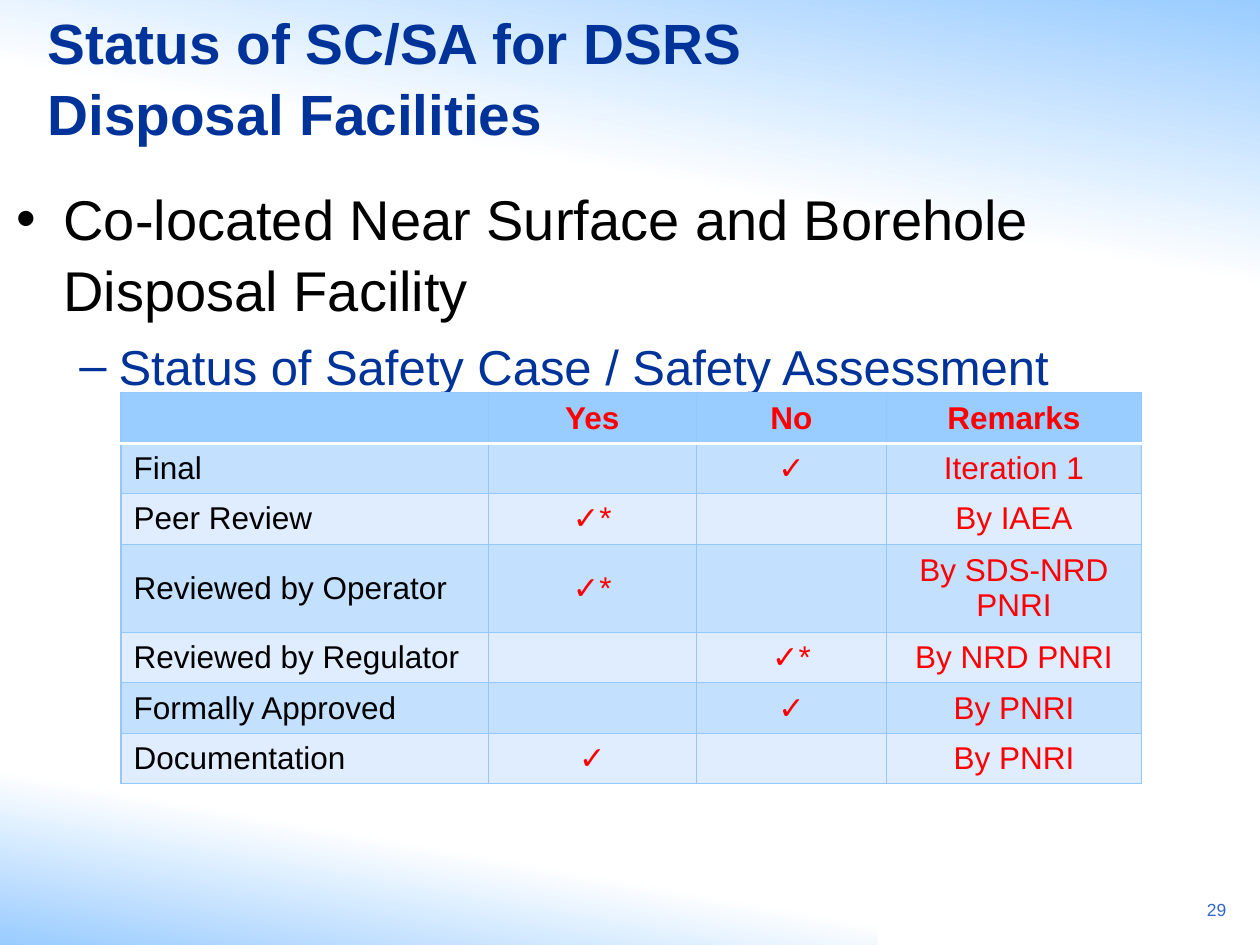
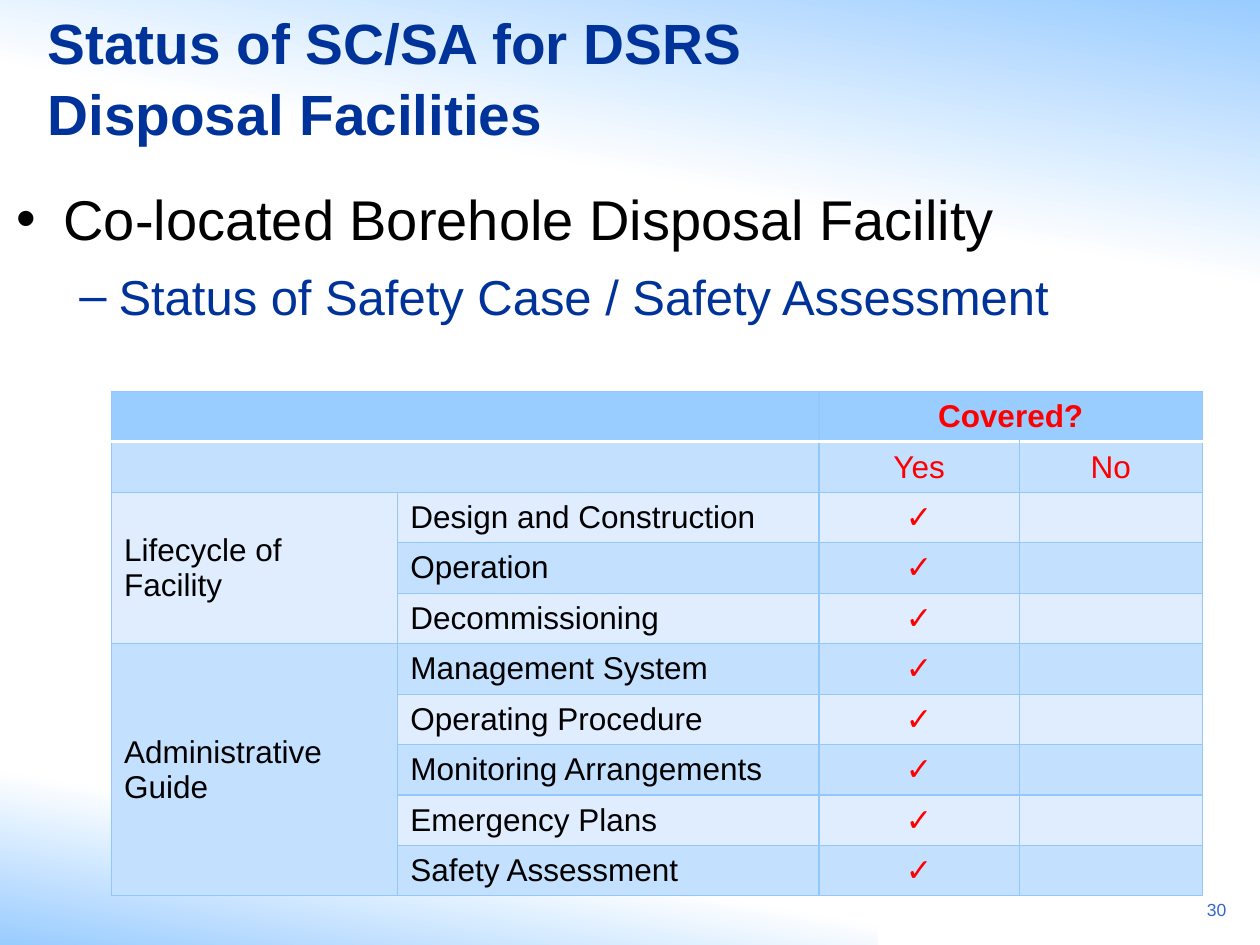
from lxml.etree import SubElement
from pptx import Presentation
from pptx.dml.color import RGBColor
from pptx.enum.shapes import MSO_SHAPE
from pptx.enum.text import MSO_ANCHOR, PP_ALIGN
from pptx.oxml.ns import qn
from pptx.util import Cm, Pt

COLOURS = {
    "sky": "99CCFF", "white": "FFFFFF", "navy": "003399", "number": "3366CC",
    "black": "000000", "red": "FF0000", "grid": "93C8FC",
    "dark_band": "C3E0FF", "light_band": "E0EDFF",
}
TITLE = "Status of SC/SA for DSRS Disposal Facilities"
SUBHEADING = "Status of Safety Case / Safety Assessment"
ROW_HEIGHT = 0.96
TALL_ROW = 1.68

# left, top, width, height, gradient angle, position where white begins
BACKGROUND_BANDS = [
    (0, 14.73, 17.7, 4.32, 80, 0.48),
    (0, 0, 25.4, 5.92, 260, 0.56),
]

PAGES = [
    {
        "number": "29",
        "heading": "Co-located Near Surface and Borehole Disposal Facility",
        "place": (2.44, 7.92),
        "columns": [7.4, 4.2, 3.83, 5.14],
        "label_columns": 1,
        "tall_rows": [3],
        "merges": [],
        "rows": [
            ["", "Yes", "No", "Remarks"],
            ["Final", "", "✓", "Iteration 1"],
            ["Peer Review", "✓*", "", "By IAEA"],
            ["Reviewed by Operator", "✓*", "", "By SDS-NRD PNRI"],
            ["Reviewed by Regulator", "", "✓*", "By NRD PNRI"],
            ["Formally Approved", "", "✓", "By PNRI"],
            ["Documentation", "✓", "", "By PNRI"],
        ],
    },
    {
        "number": "30",
        "heading": "Co-located Borehole Disposal Facility",
        "place": (2.25, 7.89),
        "columns": [5.77, 8.49, 4.04, 3.69],
        "label_columns": 2,
        "tall_rows": [],
        # first row, first column, last row, last column
        "merges": [(0, 0, 0, 1), (0, 2, 0, 3), (1, 0, 1, 1), (2, 0, 4, 0), (5, 0, 9, 0)],
        "rows": [
            ["", "", "Covered?", ""],
            ["", "", "Yes", "No"],
            ["Lifecycle of Facility", "Design and Construction", "✓", ""],
            ["", "Operation", "✓", ""],
            ["", "Decommissioning", "✓", ""],
            ["Administrative Guide", "Management System", "✓", ""],
            ["", "Operating Procedure", "✓", ""],
            ["", "Monitoring Arrangements", "✓", ""],
            ["", "Emergency Plans", "✓", ""],
            ["", "Safety Assessment", "✓", ""],
        ],
    },
]


def write(frame, text, size=18, colour="black", bold=False, align=PP_ALIGN.LEFT,
          level=0, bullet=None, margin=0, hanging=0, before=0, spacing=None):
    """Fill the frame's empty first paragraph, or add a new one."""
    frame.word_wrap = True
    para = frame.paragraphs[0]
    if para.runs:
        para = frame.add_paragraph()
    para.alignment = align
    para.level = level
    if before:
        para.space_before = Pt(before)
    if spacing:
        para.line_spacing = spacing
    if bullet:
        properties = para._p.get_or_add_pPr()
        properties.set("marL", str(Cm(margin)))
        properties.set("indent", str(-Cm(hanging)))
        SubElement(properties, qn("a:buFont"), typeface="Arial")
        SubElement(properties, qn("a:buChar"), char=bullet)
    span = para.add_run()
    span.text = text
    span.font.name = "Arial"
    span.font.size = Pt(size)
    span.font.bold = bold
    span.font.color.rgb = RGBColor.from_string(COLOURS[colour])


def paint_cell(cell, row):
    """Give a cell the borders and the fill that belong to its row."""
    properties = cell._tc.get_or_add_tcPr()
    for side in ("L", "R", "T", "B"):
        under_header = (row, side) in ((0, "B"), (1, "T"))
        colour, width = ("white", 2) if under_header else ("grid", 0.75)
        line = SubElement(properties, qn("a:ln" + side), w=str(Pt(width)))
        fill = SubElement(line, qn("a:solidFill"))
        SubElement(fill, qn("a:srgbClr"), val=COLOURS[colour])
    band = "sky" if row == 0 else "dark_band" if row % 2 else "light_band"
    cell.fill.solid()
    cell.fill.fore_color.rgb = RGBColor.from_string(COLOURS[band])
    cell.vertical_anchor = MSO_ANCHOR.MIDDLE


deck = Presentation()
deck.slide_width, deck.slide_height = Cm(25.4), Cm(19.05)
blank_layout = deck.slide_layouts[6]

for content in PAGES:
    page = deck.slides.add_slide(blank_layout)

    for left, top, width, height, angle, white_from in BACKGROUND_BANDS:
        band = page.shapes.add_shape(
            MSO_SHAPE.RECTANGLE, Cm(left), Cm(top), Cm(width), Cm(height))
        band.shadow.inherit = False
        band.line.fill.background()
        band.fill.gradient()
        band.fill.gradient_angle = angle
        stops = band.fill.gradient_stops
        for stop, colour, position in zip(stops, ("sky", "white"), (0, white_from)):
            stop.color.rgb = RGBColor.from_string(COLOURS[colour])
            stop.position = position

    title = page.shapes.add_textbox(Cm(0.71), Cm(0.33), Cm(19.2), Cm(2.39))
    title.text_frame.vertical_anchor = MSO_ANCHOR.MIDDLE
    write(title.text_frame, TITLE, size=32.4, colour="navy", bold=True, spacing=1.05)

    body = page.shapes.add_textbox(Cm(0.08), Cm(3.53), Cm(25.32), Cm(11.43))
    write(body.text_frame, content["heading"], size=32, bullet="•",
          margin=0.95, hanging=0.95, spacing=1.05)
    write(body.text_frame, SUBHEADING, size=28, colour="navy", level=1, bullet="–",
          margin=2.06, hanging=0.79, before=6.5, spacing=1.05)

    number = page.shapes.add_textbox(Cm(23.55), Cm(18), Cm(1.42), Cm(0.81))
    write(number.text_frame, content["number"], size=10, colour="number",
          align=PP_ALIGN.RIGHT)

    rows, columns = content["rows"], content["columns"]
    left, top = content["place"]
    status = page.shapes.add_table(
        len(rows), len(columns), Cm(left), Cm(top),
        Cm(sum(columns)), Cm(ROW_HEIGHT * len(rows))).table
    status.horz_banding = False
    for column, width in zip(status.columns, columns):
        column.width = Cm(width)
    for row, texts in enumerate(rows):
        tall = row in content["tall_rows"]
        status.rows[row].height = Cm(TALL_ROW if tall else ROW_HEIGHT)
        for column, text in enumerate(texts):
            cell = status.cell(row, column)
            paint_cell(cell, row)
            if text and column < content["label_columns"]:
                write(cell.text_frame, text)
            elif text:
                write(cell.text_frame, text, colour="red", bold=row == 0,
                      align=PP_ALIGN.CENTER)
    for first_row, first_column, last_row, last_column in content["merges"]:
        status.cell(first_row, first_column).merge(status.cell(last_row, last_column))

deck.save("out.pptx")
